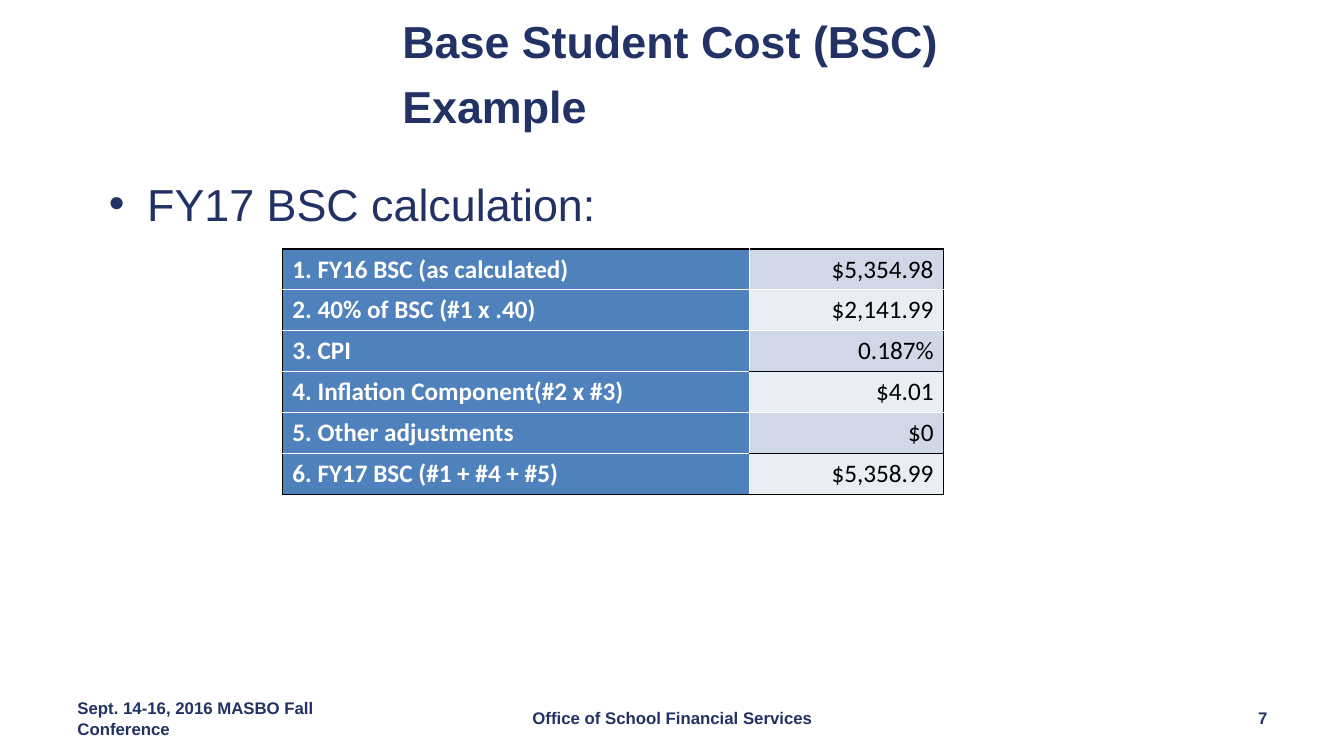
from lxml.etree import SubElement as Sub
from pptx import Presentation
from pptx.dml.color import RGBColor as Rgb
from pptx.enum.text import MSO_ANCHOR as Anchor, MSO_AUTO_SIZE as Fit, PP_ALIGN as Align
from pptx.oxml.ns import qn
from pptx.util import Inches, Pt

HUES = {"navy": "223264", "blue": "4F81BD", "dark": "D0D8E8",
        "light": "E9EDF4", "white": "FFFFFF", "black": "000000"}
COSTS = [
    ("1. FY16 BSC (as calculated)", "$5,354.98"),
    ("2. 40% of BSC (#1 x .40)", "$2,141.99"),
    ("3. CPI", "0.187%"),
    ("4. Inflation Component(#2 x #3)", "$4.01"),
    ("5. Other adjustments", "$0"),
    ("6. FY17 BSC (#1 + #4 + #5)", "$5,358.99"),
]
RULED = (2, 4)  # rows whose value is underlined in black


class Deck:
    """Holds the style and the slide; lengths are steps of a 0.1 inch grid."""
    step = Inches(0.1)
    face = "Arial"

    def __init__(self):
        self.show = Presentation()
        self.show.slide_width = Inches(13.33)
        self.show.slide_height = Inches(7.5)
        self.page = self.show.slides.add_slide(self.show.slide_layouts[1])

    def grid(self, *steps):
        return [int(n * self.step) for n in steps]

    def style(self, frame, size, bold, hue="navy", face=face, align=Align.LEFT):
        for para in frame.paragraphs:
            para.alignment = align
            for run in para.runs:
                font = run.font
                font.name, font.size, font.bold = face, Pt(size), bold
                font.color.rgb = Rgb.from_string(HUES[hue])

    def place(self, shape, area):
        shape.left, shape.top, shape.width, shape.height = self.grid(*area)
        frame = shape.text_frame
        frame.word_wrap, frame.auto_size = True, Fit.NONE
        frame.vertical_anchor = Anchor.TOP
        return frame

    def title(self, text, area):
        frame = self.place(self.page.shapes.title, area)
        frame.text = text
        for para in frame.paragraphs[1:]:
            para.space_before = Pt(8)
        self.style(frame, 32, True)

    def body(self, text, area):
        frame = self.place(self.page.placeholders[1], area)
        frame.text = text
        for para in frame.paragraphs:
            para.space_before = Pt(0)
            props = para._p.get_or_add_pPr()
            props.set("marL", str(Inches(0.38)))
            props.set("indent", str(-Inches(0.38)))
            Sub(props, qn("a:buFont"), typeface=self.face)
            Sub(props, qn("a:buChar"), char="•")
        self.style(frame, 32, False)

    def foot(self, text, area, align):
        frame = self.place(self.page.shapes.add_textbox(0, 0, 0, 0), area)
        frame.vertical_anchor = Anchor.MIDDLE
        frame.text = text
        self.style(frame, 12, True, align=align)

    def edge(self, cell, side, hue):
        line = Sub(cell._tc.get_or_add_tcPr(), qn("a:" + side), w=str(Pt(1)))
        Sub(Sub(line, qn("a:solidFill")), qn("a:srgbClr"), val=HUES[hue])

    def cell(self, cell, text, fill, black, **look):
        cell.text = text
        cell.margin_top = cell.margin_bottom = Inches(0.05)
        self.style(cell.text_frame, 18, face="Calibri", **look)
        for side in ("lnL", "lnR", "lnT", "lnB"):
            self.edge(cell, side, "black" if black[side] else "white")
        cell.fill.solid()
        cell.fill.fore_color.rgb = Rgb.from_string(HUES[fill])

    def table(self, rows, left, top, wide, high):
        area = self.grid(left, top, sum(wide), high * len(rows))
        table = self.page.shapes.add_table(len(rows), len(wide), *area).table
        table.first_row = table.horz_banding = False
        for col, size in zip(table.columns, self.grid(*wide)):
            col.width = size
        last = len(rows) - 1
        for i, (label, value) in enumerate(rows):
            table.rows[i].height = self.grid(high)[0]
            self.cell(table.cell(i, 0), label, "blue",
                      {"lnL": True, "lnR": False, "lnT": i == 0, "lnB": i == last},
                      bold=True, hue="white")
            self.cell(table.cell(i, 1), value, "light" if i % 2 else "dark",
                      {"lnL": False, "lnR": True, "lnT": i == 0 or i - 1 in RULED,
                       "lnB": i == last or i in RULED},
                      bold=False, hue="black", align=Align.RIGHT)


def main():
    deck = Deck()
    deck.title("Base Student Cost (BSC)\nExample", (38.9, 0.9, 83.1, 11.7))
    deck.body("FY17 BSC calculation:", (9.8, 17, 120, 8.3))
    deck.table(COSTS, 28, 24.7, (46.3, 19.3), 4.05)
    deck.foot("Sept. 14-16, 2016 MASBO Fall Conference", (6.7, 68.5, 31.1, 5.5), Align.LEFT)
    deck.foot("Office of School Financial Services", (45.6, 68.5, 42.2, 5.5), Align.CENTER)
    deck.foot("7", (95.6, 68.5, 31.1, 5.5), Align.RIGHT)
    deck.show.save("out.pptx")


if __name__ == "__main__":
    main()
